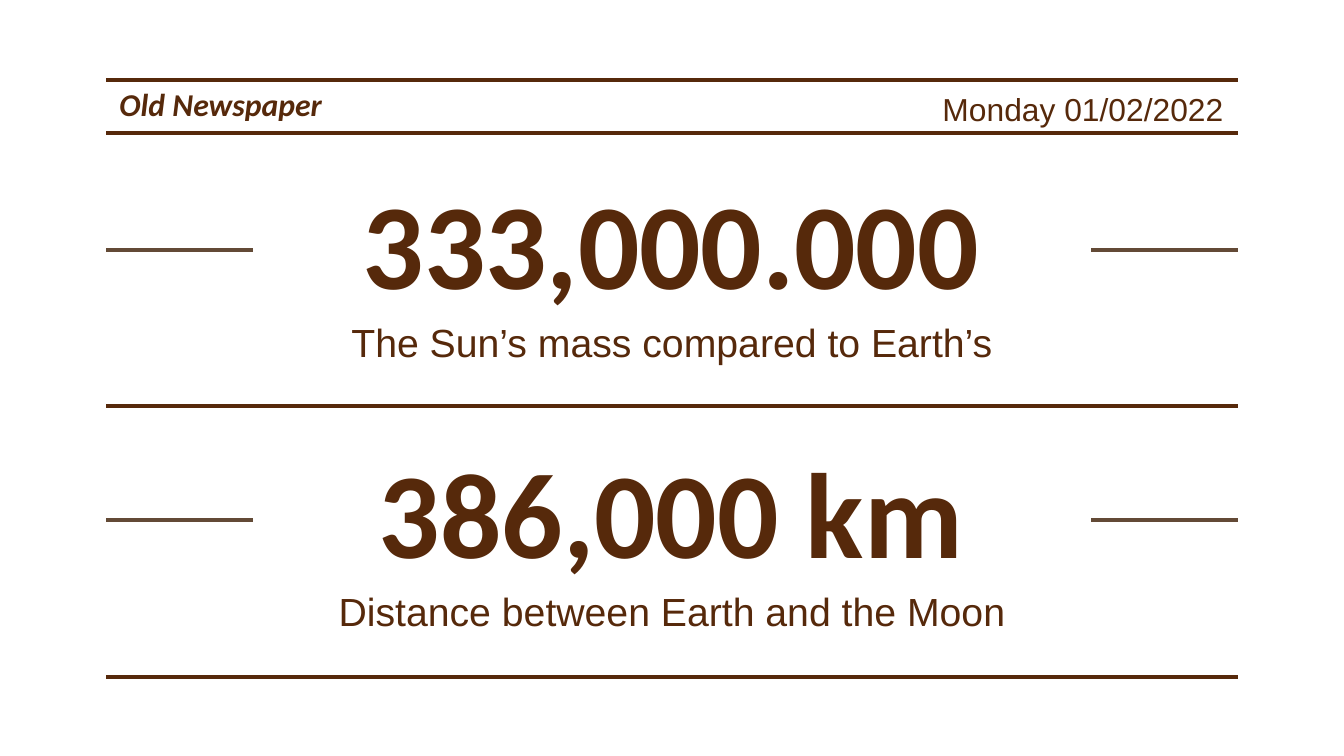
from lxml.etree import SubElement
from pptx import Presentation
from pptx.dml.color import RGBColor
from pptx.enum.shapes import MSO_CONNECTOR as Connector
from pptx.enum.text import MSO_ANCHOR as Anchor, PP_ALIGN as Align
from pptx.oxml.ns import qn
from pptx.util import Pt

COLORS = {"brown": "56290B", "faded": "634A36"}
LEFT, RIGHT = 56.9, 663.1
DASH = 78.5
HEADER_TOP, HEADER_HEIGHT = 38, 40.3
BLOCK_STEP = 144
FACTS = [
    ("333,000.000", "The Sun’s mass compared to Earth’s"),
    ("386,000 km", "Distance between Earth and the Moon"),
]


def add_rule(slide, left, right, top, color="brown"):
    line = slide.shapes.add_connector(
        Connector.STRAIGHT, Pt(left), Pt(top), Pt(right), Pt(top)
    )
    line.line.color.rgb = RGBColor.from_string(COLORS[color])
    line.line.width = Pt(2.25)
    SubElement(line._element.spPr, qn("a:effectLst"))


def write_text(shape, box, text, size, font="Arial", align=Align.CENTER,
               bold=False, italic=False, spacing=1.0, anchor=Anchor.MIDDLE):
    shape.left, shape.top, shape.width, shape.height = map(Pt, box)
    frame = shape.text_frame
    frame.word_wrap = True
    frame.vertical_anchor = anchor
    frame.margin_left = frame.margin_right = Pt(7.2)
    frame.margin_top = frame.margin_bottom = Pt(7.2)
    paragraph = frame.paragraphs[0]
    paragraph.alignment = align
    paragraph.line_spacing = spacing
    run = paragraph.add_run()
    run.text = text
    run.font.name = font
    run.font.size = Pt(size)
    run.font.bold = bold
    run.font.italic = italic
    run.font.color.rgb = RGBColor.from_string(COLORS["brown"])


def add_text(slide, box, text, size, **style):
    shape = slide.shapes.add_textbox(*map(Pt, box))
    write_text(shape, box, text, size, **style)


def add_header(slide):
    for top in (43, 71.2):
        add_rule(slide, LEFT, RIGHT, top)
    add_text(slide, (LEFT, HEADER_TOP, 193, HEADER_HEIGHT), "Old Newspaper", 17,
             font="Calibri", align=Align.LEFT, bold=True, italic=True,
             anchor=Anchor.TOP)
    add_text(slide, (458.8, HEADER_TOP, 203.8, HEADER_HEIGHT),
             "Monday 01/02/2022", 17, align=Align.RIGHT)


def add_fact(slide, index, number, caption):
    offset = index * BLOCK_STEP
    number_box = (109.5, 78.5 + offset, 500.4, 89.3)
    number_style = dict(font="Calibri", bold=True, spacing=1.15)
    if index == 0:
        write_text(slide.shapes.title, number_box, number, 65, **number_style)
    else:
        add_text(slide, number_box, number, 65, **number_style)
    add_text(slide, (LEFT, 162 + offset, RIGHT - LEFT, 42.5), caption, 21)
    dash_top = 133.9 + index * 144.7
    add_rule(slide, LEFT, LEFT + DASH, dash_top, "faded")
    add_rule(slide, RIGHT - DASH, RIGHT, dash_top, "faded")
    add_rule(slide, LEFT, RIGHT, 217.4 + index * 145.4)


def main():
    presentation = Presentation()
    presentation.slide_width, presentation.slide_height = Pt(720), Pt(405)
    slide = presentation.slides.add_slide(presentation.slide_layouts[5])
    add_header(slide)
    for index, (number, caption) in enumerate(FACTS):
        add_fact(slide, index, number, caption)
    presentation.save("out.pptx")


if __name__ == "__main__":
    main()
